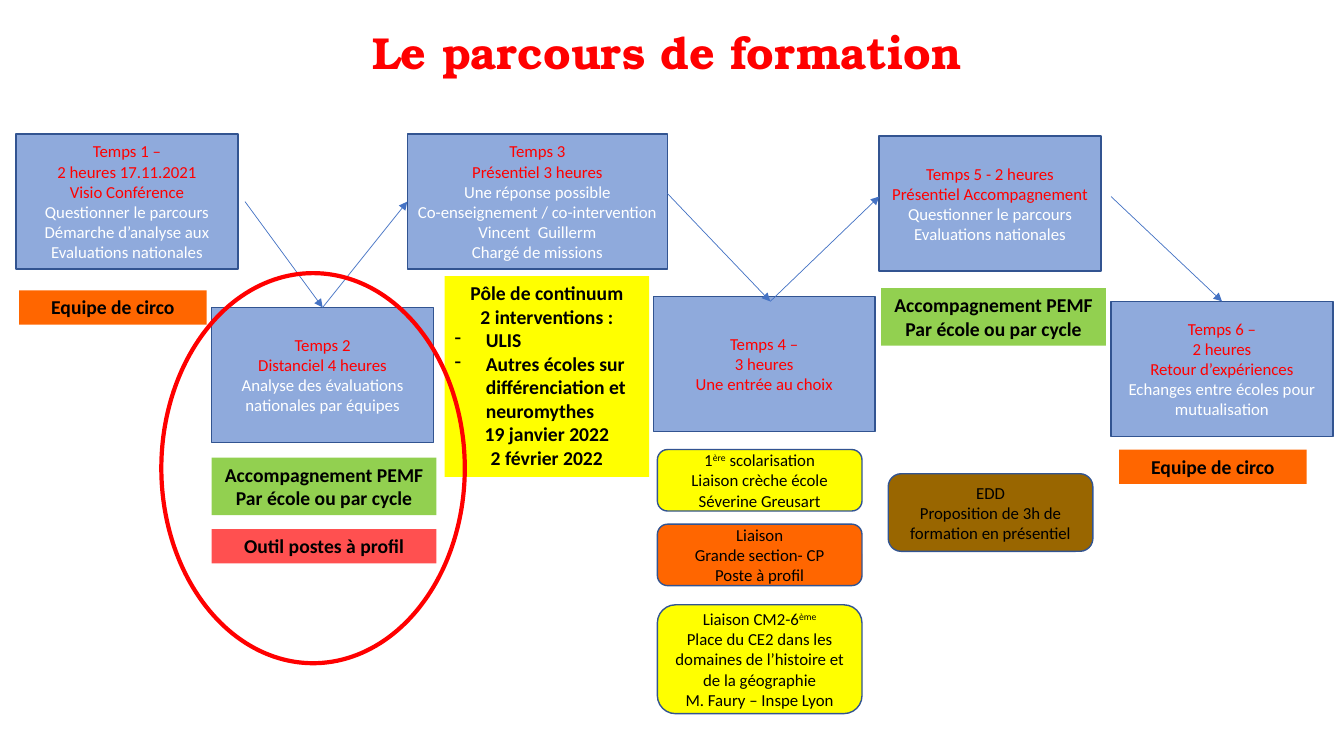
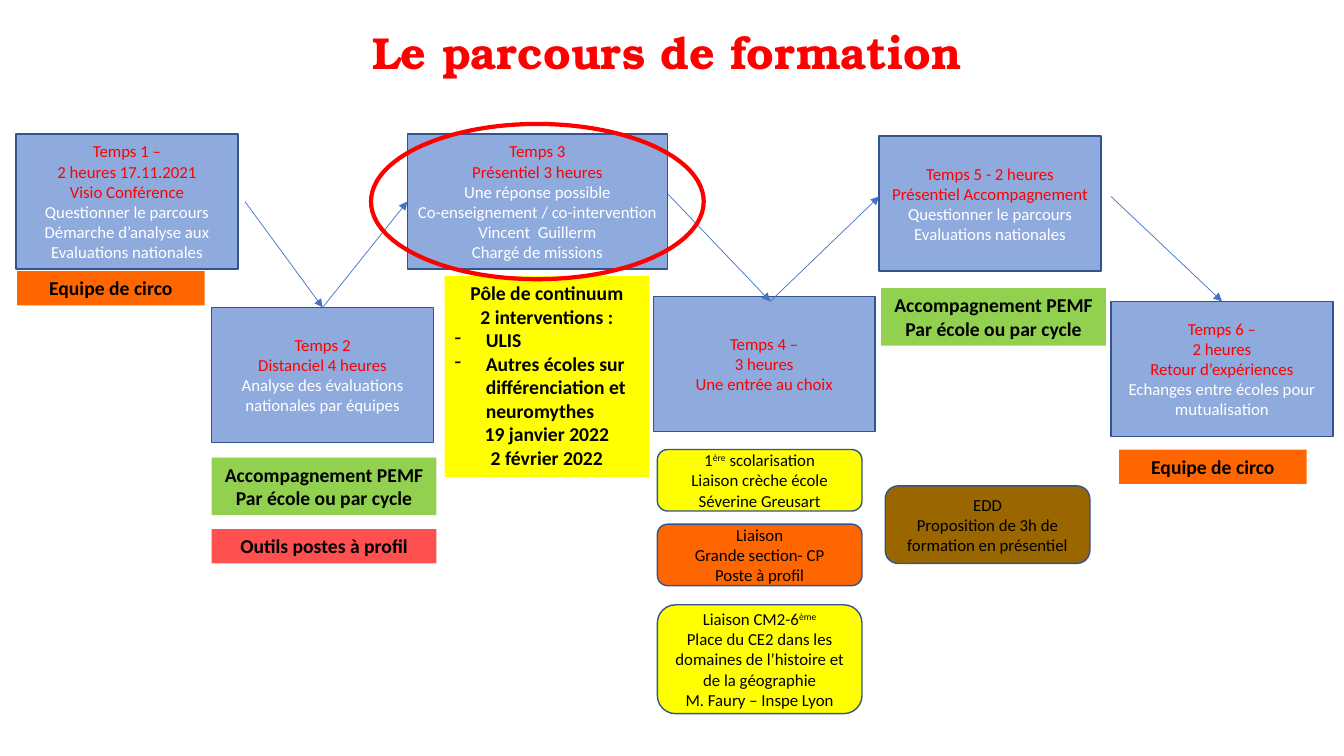
from dataclasses import dataclass, replace
from typing import NamedTuple

from lxml.etree import SubElement
from pptx import Presentation
from pptx.dml.color import RGBColor
from pptx.enum.shapes import MSO_CONNECTOR as Connector, MSO_SHAPE as Shape
from pptx.enum.text import MSO_ANCHOR as Anchor, MSO_AUTO_SIZE as AutoSize, PP_ALIGN as Align
from pptx.oxml.ns import qn
from pptx.slide import Slide
from pptx.text.text import TextFrame
from pptx.util import Emu, Pt

EMU_PER_PX = 9144
BULLET = "- "
SUPERSCRIPT = "^"


@dataclass(frozen=True)
class Theme:
    title_font: str = "TeX Gyre Bonum"
    body_font: str = "Calibri"
    title_size: int = 32
    label_size: int = 14
    body_size: int = 12
    outline_width: float = 1
    arrow_width: float = 0.5
    highlight_width: float = 3
    bullet_indent: int = 31
    red: str = "FF0000"
    white: str = "FFFFFF"
    black: str = "000000"
    blue: str = "8FAADC"
    outline: str = "325491"
    arrow: str = "4472C4"
    yellow: str = "FFFF00"
    orange: str = "FF6600"
    green: str = "92D050"
    coral: str = "FF5050"
    brown: str = "996600"


THEME = Theme()


class Area(NamedTuple):
    left: int
    top: int
    width: int
    height: int


class Arrow(NamedTuple):
    start: tuple[int, int]
    end: tuple[int, int]


@dataclass(frozen=True)
class Step:
    area: Area
    headings: tuple[str, ...]
    details: tuple[str, ...] = ()


@dataclass(frozen=True)
class Box:
    area: Area
    fill: str
    lines: tuple[str, ...]


@dataclass(frozen=True)
class Page:
    first_team: Area
    profile_text: str
    sustainability: Area
    highlight: Area


TITLE = "Le parcours de formation"
TITLE_AREA = Area(87, 19, 1150, 72)
STEP_SIZE = (220, 134)
TEAM_SIZE = (186, 34)
SUPPORT_SIZE = (223, 57)
CARD_LEFT, CARD_WIDTH = 652, 203

STEPS = (
    Step(Area(16, 133, *STEP_SIZE),
         ("Temps 1 –", "2 heures 17.11.2021", "Visio Conférence"),
         ("Questionner le parcours", "Démarche d’analyse aux Evaluations nationales")),
    Step(Area(210, 305, *STEP_SIZE),
         ("Temps 2", "Distanciel 4 heures"),
         ("Analyse des évaluations nationales par équipes",)),
    Step(Area(404, 133, 258, 134),
         ("Temps 3", "Présentiel 3 heures"),
         ("Une réponse possible", "Co-enseignement / co-intervention",
          "Vincent  Guillerm", "Chargé de missions")),
    Step(Area(648, 294, *STEP_SIZE),
         ("Temps 4 –", "3 heures", "Une entrée au choix")),
    Step(Area(872, 135, *STEP_SIZE),
         ("Temps 5 - 2 heures", "Présentiel Accompagnement"),
         ("Questionner le parcours", "Evaluations nationales")),
    Step(Area(1102, 299, *STEP_SIZE),
         ("Temps 6 –", "2 heures", "Retour d’expériences"),
         ("Echanges entre écoles pour mutualisation",)),
)

CARDS = (
    Box(Area(CARD_LEFT, 446, CARD_WIDTH, 61), THEME.yellow,
        ("1^ère^ scolarisation", "Liaison crèche école", "Séverine Greusart")),
    Box(Area(CARD_LEFT, 600, CARD_WIDTH, 108), THEME.yellow,
        ("Liaison CM2-6^ème^",
         "Place du CE2 dans les domaines de l’histoire et de la géographie",
         "M. Faury – Inspe Lyon")),
    Box(Area(CARD_LEFT, 520, CARD_WIDTH, 61), THEME.orange,
        ("Liaison", "Grande section- CP", "Poste à profil")),
)

ARROWS = (
    Arrow((662, 192), (764, 299)),
    Arrow((320, 305), (404, 200)),
    Arrow((243, 200), (320, 305)),
    Arrow((764, 299), (872, 195)),
    Arrow((1102, 195), (1212, 299)),
)

SUPPORT = Box(Area(210, 454, *SUPPORT_SIZE), THEME.green,
              ("Accompagnement PEMF", "Par école ou par cycle"))
TEAM = Box(Area(1110, 446, *TEAM_SIZE), THEME.orange, ("Equipe de circo",))
LABELS = (
    SUPPORT,
    Box(Area(441, 274, 203, 199), THEME.yellow,
        ("Pôle de continuum", "2 interventions :", "- ULIS",
         "- Autres écoles sur différenciation et neuromythes",
         "19 janvier 2022", "2 février 2022")),
    replace(SUPPORT, area=Area(874, 286, *SUPPORT_SIZE)),
    TEAM,
)

PAGES = (
    Page(Area(19, 288, *TEAM_SIZE), "Outil postes à profil",
         Area(881, 470, CARD_WIDTH, 77), Area(160, 271, 301, 387)),
    Page(Area(17, 269, *TEAM_SIZE), "Outils postes à profil",
         Area(878, 482, CARD_WIDTH, 77), Area(368, 123, 330, 154)),
)


def px(length: int) -> Emu:
    return Emu(length * EMU_PER_PX)


def to_emu(lengths: tuple[int, ...]) -> list[Emu]:
    return [px(length) for length in lengths]


def rgb(color: str) -> RGBColor:
    return RGBColor.from_string(color)


def write_lines(frame: TextFrame, lines: tuple[str, ...], colors: list[str],
                size: int, bold: bool = False, font: str = THEME.body_font) -> None:
    frame.word_wrap = True
    for index, (line, color) in enumerate(zip(lines, colors)):
        paragraph = frame.add_paragraph() if index else frame.paragraphs[0]
        if line.startswith(BULLET):
            paragraph.alignment = Align.LEFT
            properties = paragraph._p.get_or_add_pPr()
            indent = px(THEME.bullet_indent)
            properties.set("marL", str(indent))
            properties.set("indent", str(-indent))
            SubElement(properties, qn("a:buChar"), char=BULLET.strip())
        else:
            paragraph.alignment = Align.CENTER
        paragraph.font.name = font
        paragraph.font.size = Pt(size)
        paragraph.font.bold = bold
        paragraph.font.color.rgb = rgb(color)
        for position, text in enumerate(line.removeprefix(BULLET).split(SUPERSCRIPT)):
            if text:
                run = paragraph.add_run()
                run.text = text
                if position % 2:
                    run._r.get_or_add_rPr().set("baseline", "30000")


def draw_title(slide: Slide) -> None:
    title = slide.shapes.title
    title.left, title.top, title.width, title.height = to_emu(TITLE_AREA)
    frame = title.text_frame
    frame.auto_size = AutoSize.NONE
    frame.vertical_anchor = Anchor.MIDDLE
    write_lines(frame, (TITLE,), [THEME.red], THEME.title_size, True, THEME.title_font)
    frame.paragraphs[0].line_spacing = 0.9


def draw_panel(slide: Slide, kind: Shape, box: Box, colors: list[str]) -> None:
    shape = slide.shapes.add_shape(kind, *to_emu(box.area))
    shape.shadow.inherit = False
    shape.fill.solid()
    shape.fill.fore_color.rgb = rgb(box.fill)
    shape.line.color.rgb = rgb(THEME.outline)
    shape.line.width = Pt(THEME.outline_width)
    shape.text_frame.vertical_anchor = Anchor.MIDDLE
    write_lines(shape.text_frame, box.lines, colors, THEME.body_size)


def draw_step(slide: Slide, step: Step) -> None:
    colors = [THEME.red] * len(step.headings) + [THEME.white] * len(step.details)
    box = Box(step.area, THEME.blue, step.headings + step.details)
    draw_panel(slide, Shape.RECTANGLE, box, colors)


def draw_card(slide: Slide, card: Box) -> None:
    draw_panel(slide, Shape.ROUNDED_RECTANGLE, card, [THEME.black] * len(card.lines))


def draw_label(slide: Slide, label: Box) -> None:
    shape = slide.shapes.add_textbox(*to_emu(label.area))
    shape.fill.solid()
    shape.fill.fore_color.rgb = rgb(label.fill)
    colors = [THEME.black] * len(label.lines)
    write_lines(shape.text_frame, label.lines, colors, THEME.label_size, True)
    shape.text_frame.auto_size = AutoSize.SHAPE_TO_FIT_TEXT


def draw_arrow(slide: Slide, arrow: Arrow) -> None:
    ends = to_emu(arrow.start + arrow.end)
    connector = slide.shapes.add_connector(Connector.STRAIGHT, *ends)
    connector.line.color.rgb = rgb(THEME.arrow)
    connector.line.width = Pt(THEME.arrow_width)
    properties = connector._element.spPr
    SubElement(properties.find(qn("a:ln")), qn("a:tailEnd"), type="triangle")
    SubElement(properties, qn("a:effectLst"))


def draw_highlight(slide: Slide, area: Area) -> None:
    shape = slide.shapes.add_shape(Shape.OVAL, *to_emu(area))
    shape.shadow.inherit = False
    shape.fill.background()
    shape.line.color.rgb = rgb(THEME.red)
    shape.line.width = Pt(THEME.highlight_width)


def draw_page(slide: Slide, page: Page) -> None:
    draw_title(slide)
    for step in STEPS:
        draw_step(slide, step)
    for card in CARDS:
        draw_card(slide, card)
    for arrow in ARROWS:
        draw_arrow(slide, arrow)
    profile = Box(Area(210, 525, 223, 34), THEME.coral, (page.profile_text,))
    for label in (*LABELS, replace(TEAM, area=page.first_team), profile):
        draw_label(slide, label)
    draw_card(slide, Box(page.sustainability, THEME.brown,
                         ("EDD", "Proposition de 3h de formation en présentiel")))
    draw_highlight(slide, page.highlight)


def main() -> None:
    presentation = Presentation()
    presentation.slide_width, presentation.slide_height = to_emu((1333, 750))
    title_only = presentation.slide_layouts.get_by_name("Title Only")
    for page in PAGES:
        draw_page(presentation.slides.add_slide(title_only), page)
    presentation.save("out.pptx")


if __name__ == "__main__":
    main()
